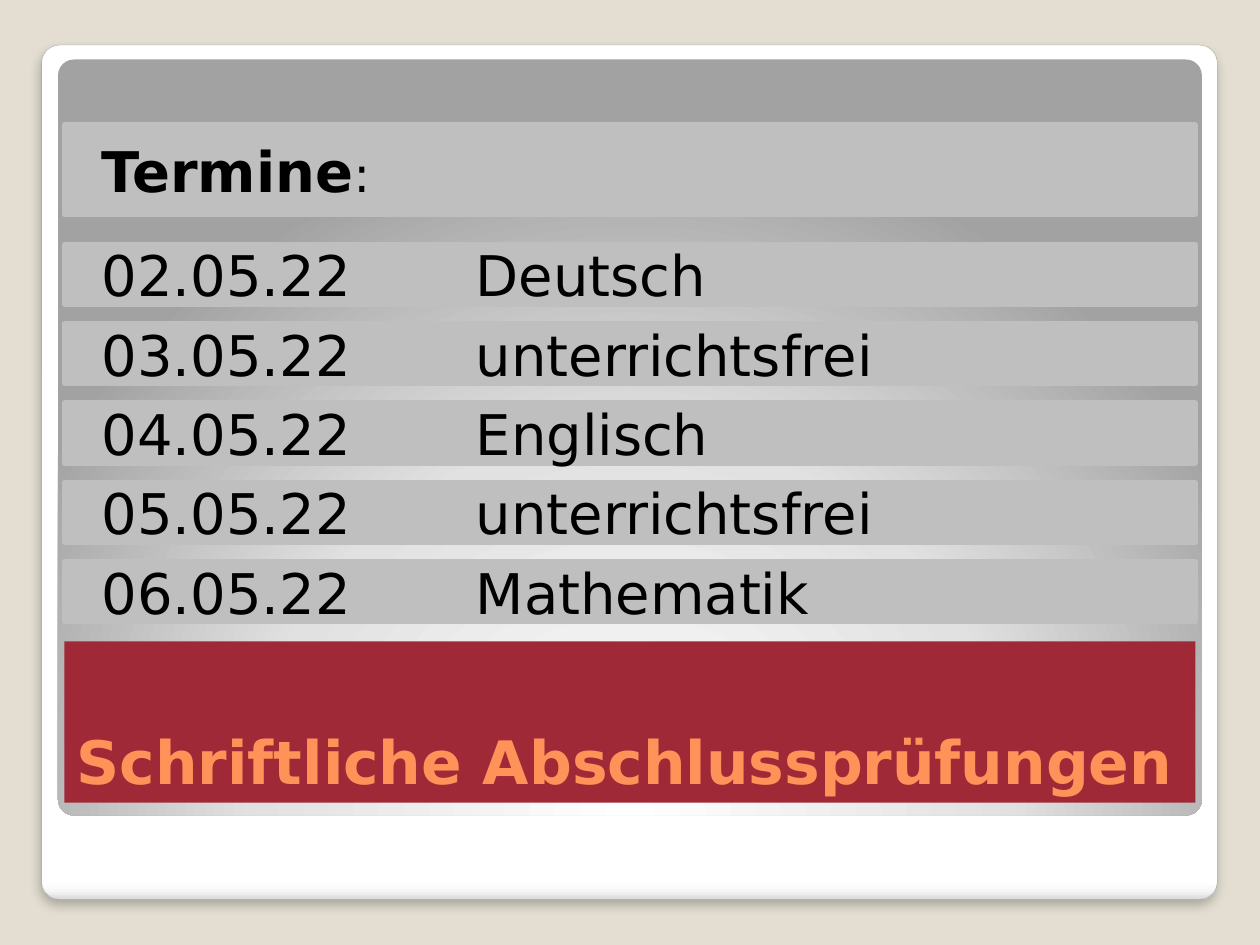
from lxml.etree import SubElement
from pptx import Presentation
from pptx.dml.color import RGBColor
from pptx.enum.shapes import MSO_SHAPE
from pptx.enum.text import MSO_ANCHOR, PP_ALIGN
from pptx.oxml import parse_xml
from pptx.oxml.ns import nsdecls, qn
from pptx.util import Cm, Pt

TITLE = "Schriftliche Abschlussprüfungen"
HEADING = [("Termine", 32, True), (":", 28, False)]
EXAMS = [
    ("02.05.22", "Deutsch"),
    ("03.05.22", "unterrichtsfrei"),
    ("04.05.22", "Englisch"),
    ("05.05.22", "unterrichtsfrei"),
    ("06.05.22", "Mathematik"),
]

FONT = "DejaVu Sans"
BEIGE = RGBColor(0xE3, 0xDE, 0xD1)
EDGE = RGBColor(0xA4, 0xA4, 0xA4)
SILVER = RGBColor(0xBF, 0xBF, 0xBF)
RED = RGBColor(0x9F, 0x29, 0x36)
ORANGE = RGBColor(0xFF, 0x92, 0x58)
BLACK = RGBColor(0, 0, 0)

CARD_STOPS = [(0, "FFFFFF"), (98, "FFFFFF"), (99, "F7F7F7"), (100, "DADADA")]
PANEL_STOPS = [(0, "FFFFFF"), (55, "E1E1E1"), (100, "A2A2A2")]
DOWNWARD = '<a:lin ang="5400000" scaled="0"/>'
CIRCULAR = ('<a:path path="circle"><a:fillToRect l="50000" t="175000" '
            'r="50000" b="-75000"/></a:path>')

BAR_LEFT, BAR_WIDTH = 1.3, 22.8
FIRST_ROW_TOP, ROW_HEIGHT, ROW_PITCH = 4.93, 1.2, 1.6
TEXT_INSET, SUBJECT_TAB = 0.75, 7.54


def add_box(slide, kind, left, top, width, height):
    shape = slide.shapes.add_shape(kind, Cm(left), Cm(top), Cm(width), Cm(height))
    shape.shadow.inherit = False
    shape.line.fill.background()
    return shape


def add_rounded(slide, left, top, width, height, stops, direction):
    shape = add_box(slide, MSO_SHAPE.ROUNDED_RECTANGLE, left, top, width, height)
    shape.adjustments[0] = 0.021
    stop_xml = "".join(
        f'<a:gs pos="{position * 1000}"><a:srgbClr val="{color}"/></a:gs>'
        for position, color in stops)
    gradient = parse_xml(f'<a:gradFill {nsdecls("a")} rotWithShape="1">'
                         f'<a:gsLst>{stop_xml}</a:gsLst>{direction}</a:gradFill>')
    shape.element.spPr.find(qn("a:prstGeom")).addnext(gradient)
    return shape


def add_soft_shadow(shape):
    effects = shape.element.spPr.find(qn("a:effectLst"))
    effects.append(parse_xml(
        f'<a:outerShdw {nsdecls("a")} blurRad="{Pt(6)}" dist="{Pt(4)}" dir="5400000" '
        'algn="t" rotWithShape="0"><a:srgbClr val="000000">'
        '<a:alpha val="25000"/></a:srgbClr></a:outerShdw>'))


def add_bar(slide, top, height, runs, fill, color, anchor):
    shape = add_box(slide, MSO_SHAPE.RECTANGLE, BAR_LEFT, top, BAR_WIDTH, height)
    shape.fill.solid()
    shape.fill.fore_color.rgb = fill
    text_frame = shape.text_frame
    text_frame.word_wrap = True
    text_frame.vertical_anchor = anchor
    paragraph = text_frame.paragraphs[0]
    paragraph.alignment = PP_ALIGN.LEFT
    for text, size, bold in runs:
        run = paragraph.add_run()
        run.text = text
        run.font.name = FONT
        run.font.size = Pt(size)
        run.font.bold = bold
        run.font.color.rgb = color
    return shape


def add_date_bar(slide, top, height, runs):
    shape = add_bar(slide, top, height, runs, SILVER, BLACK, MSO_ANCHOR.MIDDLE)
    shape.line.color.rgb = SILVER
    shape.line.width = Pt(3.35)
    text_frame = shape.text_frame
    text_frame.margin_left = Cm(TEXT_INSET)
    text_frame.margin_top = text_frame.margin_bottom = 0
    properties = text_frame.paragraphs[0]._p.get_or_add_pPr()
    tabs = SubElement(properties, qn("a:tabLst"))
    SubElement(tabs, qn("a:tab"), pos=str(Cm(SUBJECT_TAB)), algn="l")


def main():
    presentation = Presentation()
    presentation.slide_width, presentation.slide_height = Cm(25.4), Cm(19.05)
    slide = presentation.slides.add_slide(presentation.slide_layouts[6])
    slide.background.fill.solid()
    slide.background.fill.fore_color.rgb = BEIGE

    card = add_rounded(slide, 0.84, 0.91, 23.7, 17.22, CARD_STOPS, DOWNWARD)
    card.line.color.rgb = EDGE
    card.line.width = Pt(0.16)
    add_soft_shadow(card)
    add_rounded(slide, 1.17, 1.2, 23.06, 15.24, PANEL_STOPS, CIRCULAR)

    add_bar(slide, 12.93, 3.25, [(TITLE, 34.2, True)], RED, ORANGE, MSO_ANCHOR.BOTTOM)
    add_date_bar(slide, 2.52, 1.8, HEADING)
    for index, exam in enumerate(EXAMS):
        top = FIRST_ROW_TOP + index * ROW_PITCH
        add_date_bar(slide, top, ROW_HEIGHT, [("\t".join(exam), 32, False)])

    presentation.save("out.pptx")


if __name__ == "__main__":
    main()
